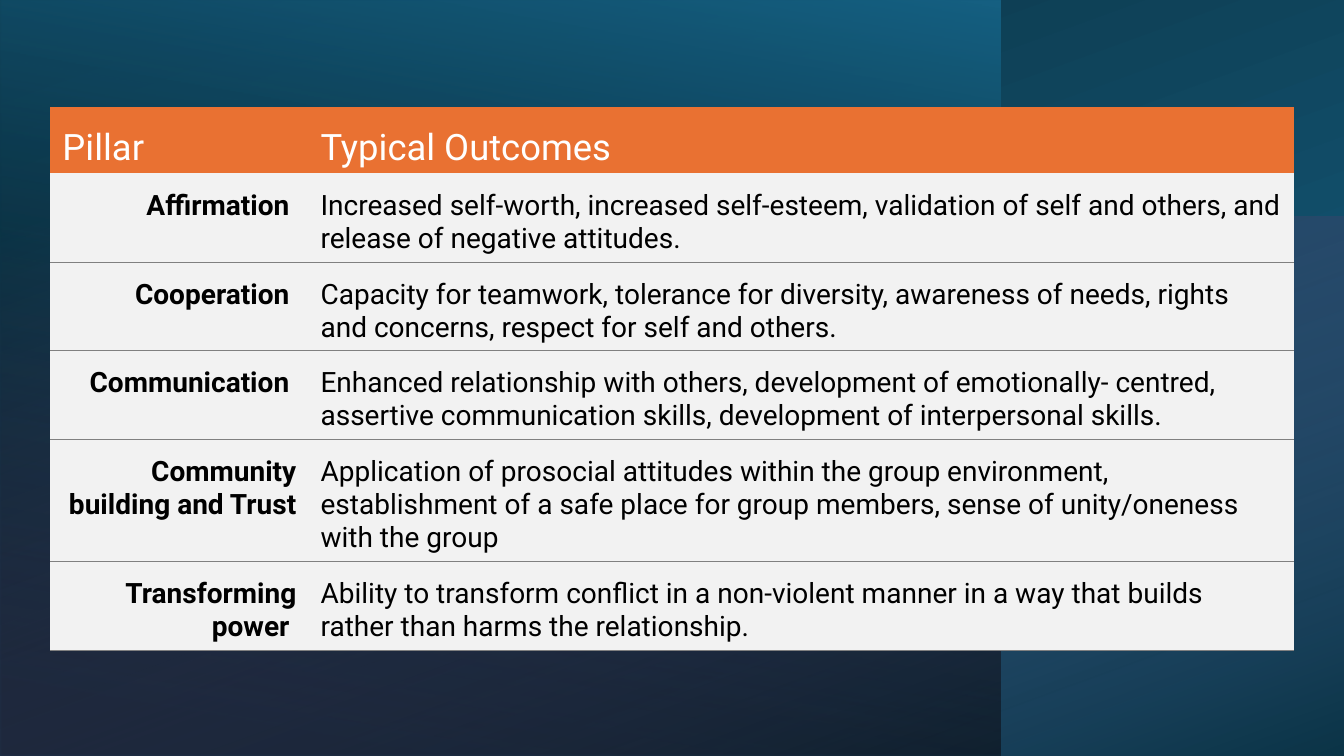
from lxml.etree import SubElement
from pptx import Presentation
from pptx.dml.color import RGBColor
from pptx.enum.shapes import MSO_SHAPE as Preset
from pptx.enum.text import MSO_ANCHOR as Anchor, PP_ALIGN as Align
from pptx.oxml import parse_xml
from pptx.oxml.ns import nsdecls, qn
from pptx.util import Inches, Pt

WIDTH, HEIGHT = 13.33, 7.5
COLORS = {
    "teal": "156082", "deep": "0B3041", "black": "000000", "orchid": "D86ECC",
    "orange": "E97132", "pale": "F2F2F2", "white": "FFFFFF", "rule": "808080",
}
HEADINGS = ("Pillar", "Typical Outcomes")
PILLARS = [
    ("Affirmation ", "Increased self-worth, increased self-esteem, validation of self "
     "and others, and release of negative attitudes."),
    ("Cooperation ", "Capacity for teamwork, tolerance for diversity, awareness of needs, "
     "rights and concerns, respect for self and others."),
    ("Communication ", "Enhanced relationship with others, development of emotionally- "
     "centred, assertive communication skills, development of interpersonal skills."),
    ("Community building and Trust ", "Application of prosocial attitudes within the group "
     "environment, establishment of a safe place for group members, sense of unity/oneness "
     "with the group"),
    ("Transforming power ", "Ability to transform conflict in a non-violent manner in a way "
     "that builds rather than harms the relationship."),
]
ROW_HEIGHTS = (0.66, 0.88, 0.88, 0.88, 1.21, 0.88)
PILLAR_SHARE = 2.56 / 12.33
MARGINS = {"margin_left": 0.12, "margin_top": 0.16, "margin_right": 0.12, "margin_bottom": 0}
HEADING = {"size": Pt(26), "bold": False}
LABEL = {"size": Pt(20), "bold": True}
OUTCOME = {"size": Pt(20), "bold": False}


def color(name):
    return RGBColor.from_string(COLORS[name])


def gradient_panel(slide, box, rotation, angle, stops):
    """Fill the visible box with a mirrored, turned panel; the angle runs clockwise.

    Each stop is (position, color name, opacity), all shares of 1.
    """
    left, top, width, height = box
    across, down = (height, width) if rotation % 180 else (width, height)
    panel = slide.shapes.add_shape(
        Preset.RECTANGLE, Inches(left + (width - across) / 2),
        Inches(top + (height - down) / 2), Inches(across), Inches(down))
    panel.shadow.inherit = False
    panel.line.fill.background()
    panel.rotation = rotation
    properties = panel.element.spPr
    properties.find(qn("a:xfrm")).set("flipH", "1")
    panel.fill.gradient()
    panel.fill.gradient_angle = 360 - angle
    for stop, (position, name, _) in zip(panel.fill.gradient_stops, stops):
        stop.position = position
        stop.color.rgb = color(name)
    for tint, (_, _, opacity) in zip(list(properties.iter(qn("a:srgbClr"))), stops):
        if opacity < 1:
            SubElement(tint, qn("a:alpha")).set("val", str(round(opacity * 100000)))


def backdrop(slide, width, height):
    side, band = width * 0.744, height * 0.713
    gradient_panel(slide, (0, 0, width, height), 270, 200,
                   [(0.08, "teal", 1), (1, "deep", 1)])
    gradient_panel(slide, (0, 0, side, height), 180, 80,
                   [(0.08, "black", 0.52), (1, "teal", 1)])
    gradient_panel(slide, (0, height - band, width, band), 270, 20,
                   [(0, "orchid", 0), (1, "black", 0.46)])


def rule_below(cell):
    cell._tc.get_or_add_tcPr().insert(0, parse_xml(
        f'<a:lnB {nsdecls("a")} w="{Pt(0.75)}"><a:solidFill>'
        f'<a:srgbClr val="{COLORS["rule"]}"/></a:solidFill></a:lnB>'))


def fill_cell(cell, text, style, ink, ground, align, anchor):
    cell.fill.solid()
    cell.fill.fore_color.rgb = color(ground)
    cell.vertical_anchor = anchor
    for side, inset in MARGINS.items():
        setattr(cell, side, Inches(inset))
    paragraph = cell.text_frame.paragraphs[0]
    paragraph.alignment = align
    run = paragraph.add_run()
    run.text = text
    run.font.name = "Roboto"
    run.font.color.rgb = color(ink)
    for name, value in style.items():
        setattr(run.font, name, value)


def pillar_table(slide, left, top, width):
    frame = slide.shapes.add_table(
        len(ROW_HEIGHTS), len(HEADINGS), Inches(left), Inches(top),
        Inches(width), Inches(sum(ROW_HEIGHTS)))
    table = frame.table
    table.horz_banding = False
    # "No Style, No Grid"
    style_id = next(frame.element.iter(qn("a:tableStyleId")))
    style_id.text = "{2D5ABB26-0587-4C30-8999-92F81FD0307C}"
    for column, share in zip(table.columns, (PILLAR_SHARE, 1 - PILLAR_SHARE)):
        column.width = Inches(width * share)
    for row, height in zip(table.rows, ROW_HEIGHTS):
        row.height = Inches(height)

    for col, heading in enumerate(HEADINGS):
        fill_cell(table.cell(0, col), heading, HEADING, "white", "orange",
                  Align.JUSTIFY, Anchor.MIDDLE)
    formats = ((LABEL, Align.RIGHT), (OUTCOME, Align.LEFT))
    for row, pillar in enumerate(PILLARS, start=1):
        for col, (text, (style, align)) in enumerate(zip(pillar, formats)):
            cell = table.cell(row, col)
            fill_cell(cell, text, style, "black", "pale", align, Anchor.TOP)
            rule_below(cell)


def main():
    deck = Presentation()
    deck.slide_width, deck.slide_height = Inches(WIDTH), Inches(HEIGHT)
    slide = deck.slides.add_slide(deck.slide_layouts[6])
    backdrop(slide, WIDTH, HEIGHT)
    pillar_table(slide, 0.5, 1.06, WIDTH - 2 * 0.5)
    deck.save("out.pptx")


if __name__ == "__main__":
    main()
